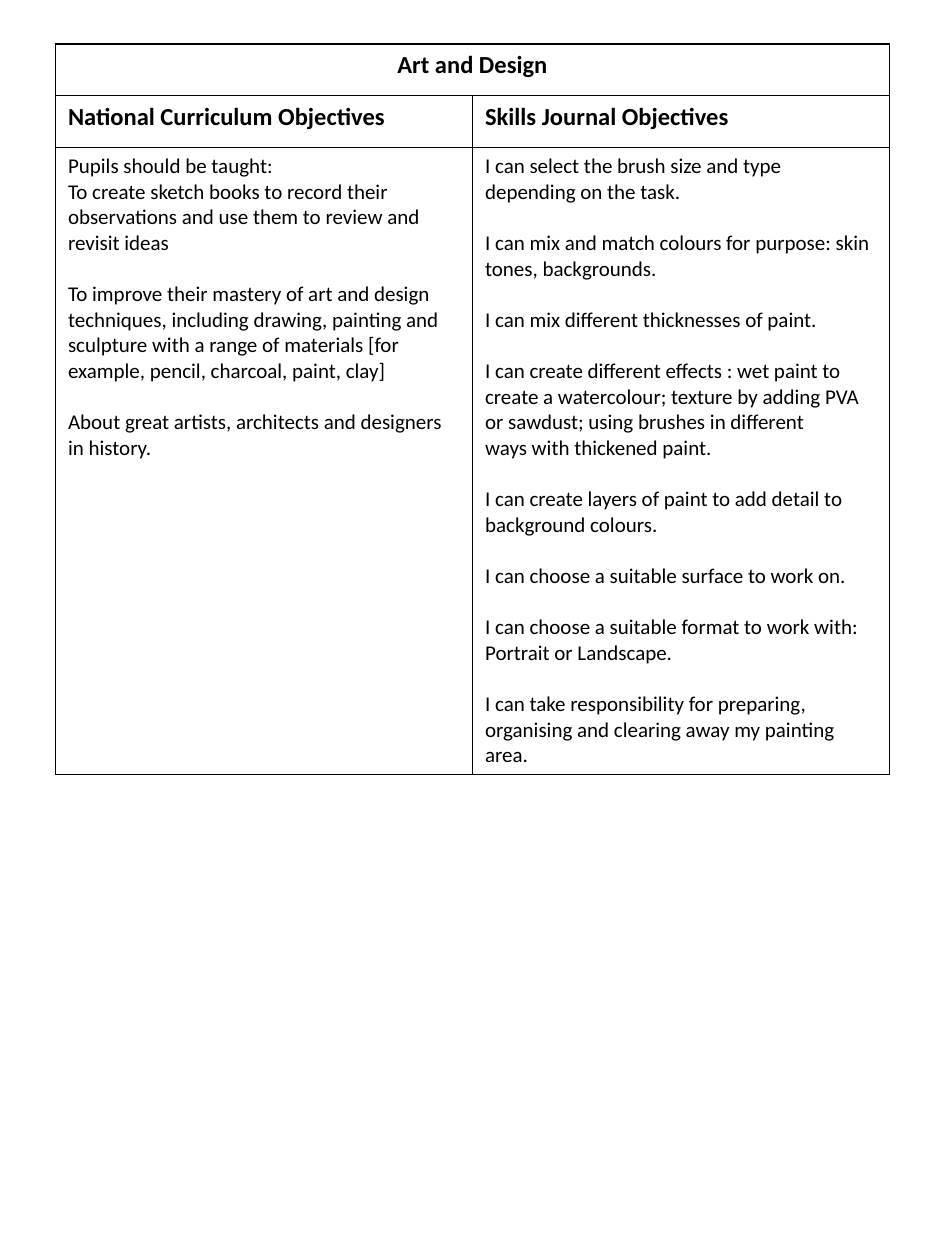
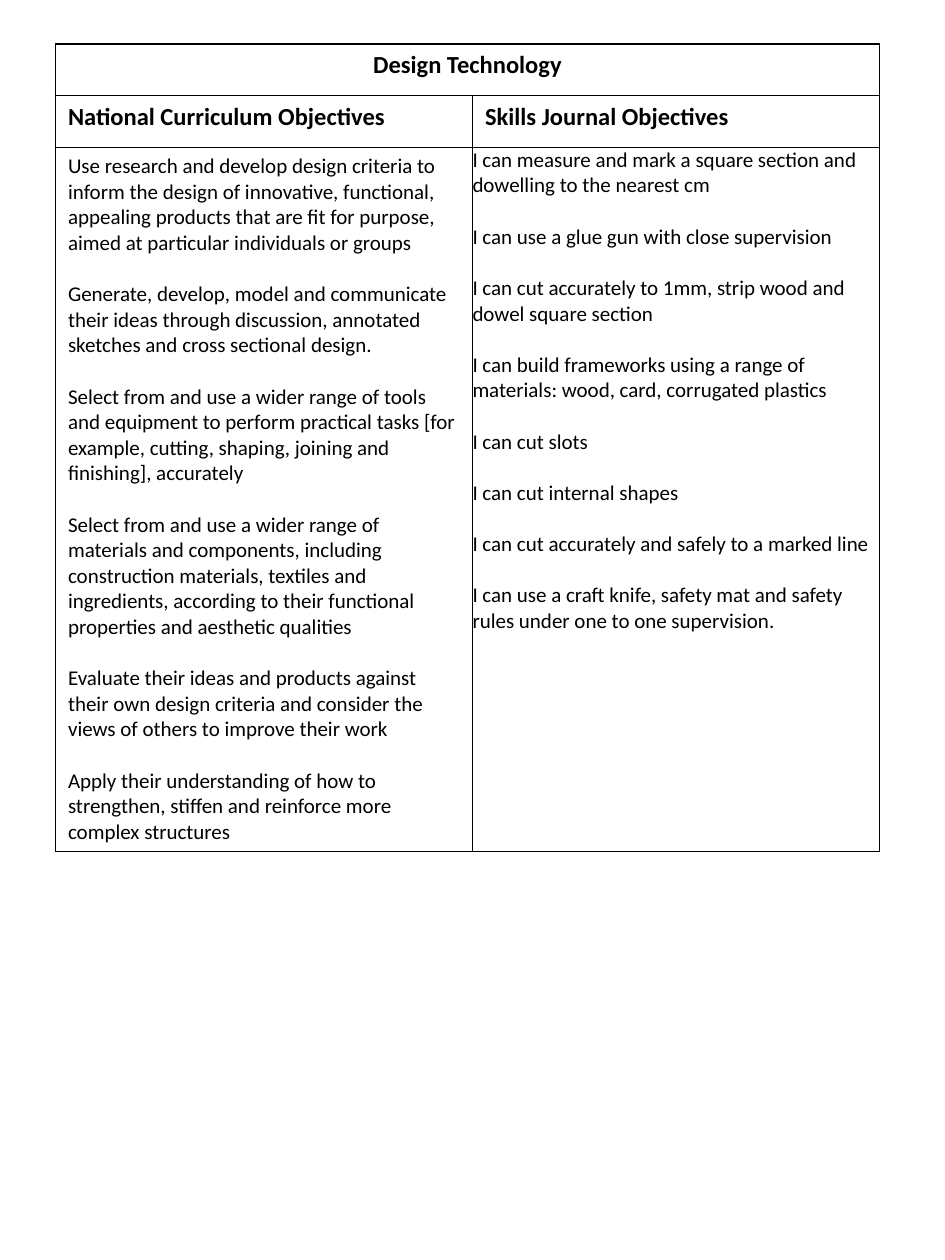
from lxml.etree import SubElement
from pptx import Presentation
from pptx.dml.color import RGBColor
from pptx.enum.text import PP_ALIGN
from pptx.oxml.ns import qn
from pptx.util import Inches, Pt

# Content: each body column is a list of objectives, each a list of paragraphs
HEADINGS = ["National Curriculum Objectives", "Skills Journal Objectives"]
SUBJECTS = [
    {
        "title": "Art and Design",
        "widths": [3.31, 3.31],
        "height": 5.71,
        "flush_columns": [],
        "columns": [
            [
                ["Pupils should be taught:",
                 "To create sketch books to record their observations and use them to review and revisit ideas"],
                ["To improve their mastery of art and design techniques, including drawing, painting and "
                 "sculpture with a range of materials [for example, pencil, charcoal, paint, clay]"],
                ["About great artists, architects and designers in history."],
            ],
            [
                ["I can select the brush size and type depending on the task."],
                ["I can mix and match colours for purpose: skin", "tones, backgrounds."],
                ["I can mix different thicknesses of paint."],
                ["I can create different effects : wet paint to create a watercolour; texture by adding PVA "
                 "or sawdust; using brushes in different",
                 "ways with thickened paint."],
                ["I can create layers of paint to add detail to", "background colours."],
                ["I can choose a suitable surface to work on."],
                ["I can choose a suitable format to work with:", "Portrait or Landscape."],
                ["I can take responsibility for preparing, organising and clearing away my painting", "area."],
            ],
        ],
    },
    {
        "title": "Design Technology",
        "widths": [3.31, 3.23],
        "height": 6.31,
        "flush_columns": [1],
        "columns": [
            [
                ["Use research and develop design criteria to inform the design of innovative, functional, "
                 "appealing products that are fit for purpose, aimed at particular individuals or groups"],
                ["Generate, develop, model and communicate their ideas through discussion, annotated "
                 "sketches and cross sectional design."],
                ["Select from and use a wider range of tools and equipment to perform practical tasks "
                 "[for example, cutting, shaping, joining and finishing], accurately"],
                ["Select from and use a wider range of materials and components, including construction "
                 "materials, textiles and ingredients, according to their functional properties and "
                 "aesthetic qualities"],
                ["Evaluate their ideas and products against their own design criteria and consider the "
                 "views of others to improve their work"],
                ["Apply their understanding of how to strengthen, stiffen and reinforce more complex structures"],
            ],
            [
                ["I can measure and mark a square section and dowelling to the nearest cm"],
                ["I can use a glue gun with close supervision"],
                ["I can cut accurately to 1mm, strip wood and dowel square section"],
                ["I can build frameworks using a range of materials: wood, card, corrugated plastics"],
                ["I can cut slots"],
                ["I can cut internal shapes"],
                ["I can cut accurately and safely to a marked line"],
                ["I can use a craft knife, safety mat and safety rules under one to one supervision."],
            ],
        ],
    },
]

# Shared look
COLORS = {"text": "000000", "border": "000000"}
HEADING = {"name": "Calibri", "size": Pt(14), "bold": True}
BODY = {"name": "Calibri", "size": Pt(12), "bold": False}
LEFT, TOP, HEADER_H = 0.44, 0.35, 0.41
GAP = Pt(14.65)  # one line of body text
SIDES = ("left", "right", "top", "bottom")


def style_cell(cell):
    """Thin border on every side and no fill."""
    tcPr = cell._tc.get_or_add_tcPr()
    for tag in ("a:lnL", "a:lnR", "a:lnT", "a:lnB"):
        ln = SubElement(tcPr, qn(tag), w=str(Pt(1)))
        fill = SubElement(ln, qn("a:solidFill"))
        SubElement(fill, qn("a:srgbClr"), val=COLORS["border"])
    cell.fill.background()


def write(cell, objectives, font, align=PP_ALIGN.LEFT):
    """Write the objectives with a gap of one line between them."""
    tf = cell.text_frame
    lines = [(text, i > 0 and j == 0)
             for i, objective in enumerate(objectives)
             for j, text in enumerate(objective)]
    for n, (text, gap) in enumerate(lines):
        p = tf.add_paragraph() if n else tf.paragraphs[0]
        p.alignment = align
        if gap:
            p.space_before = GAP
        r = p.add_run()
        r.text = text
        for key, value in font.items():
            setattr(r.font, key, value)
        r.font.color.rgb = RGBColor.from_string(COLORS["text"])


def add_subject(prs, subject):
    s = prs.slides.add_slide(prs.slide_layouts[6])
    widths, height = subject["widths"], subject["height"]
    table = s.shapes.add_table(3, 2, Inches(LEFT), Inches(TOP),
                               Inches(sum(widths)), Inches(height)).table
    table.first_row = table.horz_banding = False
    for column, width in zip(table.columns, widths):
        column.width = Inches(width)
    for row, row_h in zip(table.rows, [HEADER_H, HEADER_H, height - 2 * HEADER_H]):
        row.height = Inches(row_h)
    for cell in table.iter_cells():
        style_cell(cell)

    # Title row, heading row and objectives
    table.cell(0, 0).merge(table.cell(0, 1))
    write(table.cell(0, 0), [[subject["title"]]], HEADING, PP_ALIGN.CENTER)
    for c, (heading, objectives) in enumerate(zip(HEADINGS, subject["columns"])):
        write(table.cell(1, c), [[heading]], HEADING)
        write(table.cell(2, c), objectives, BODY)
    for c in subject["flush_columns"]:
        for side in SIDES:
            setattr(table.cell(2, c), f"margin_{side}", 0)


def main():
    prs = Presentation()
    prs.slide_width, prs.slide_height = Inches(7.5), Inches(10)
    for subject in SUBJECTS:
        add_subject(prs, subject)
    prs.save("out.pptx")


if __name__ == "__main__":
    main()
